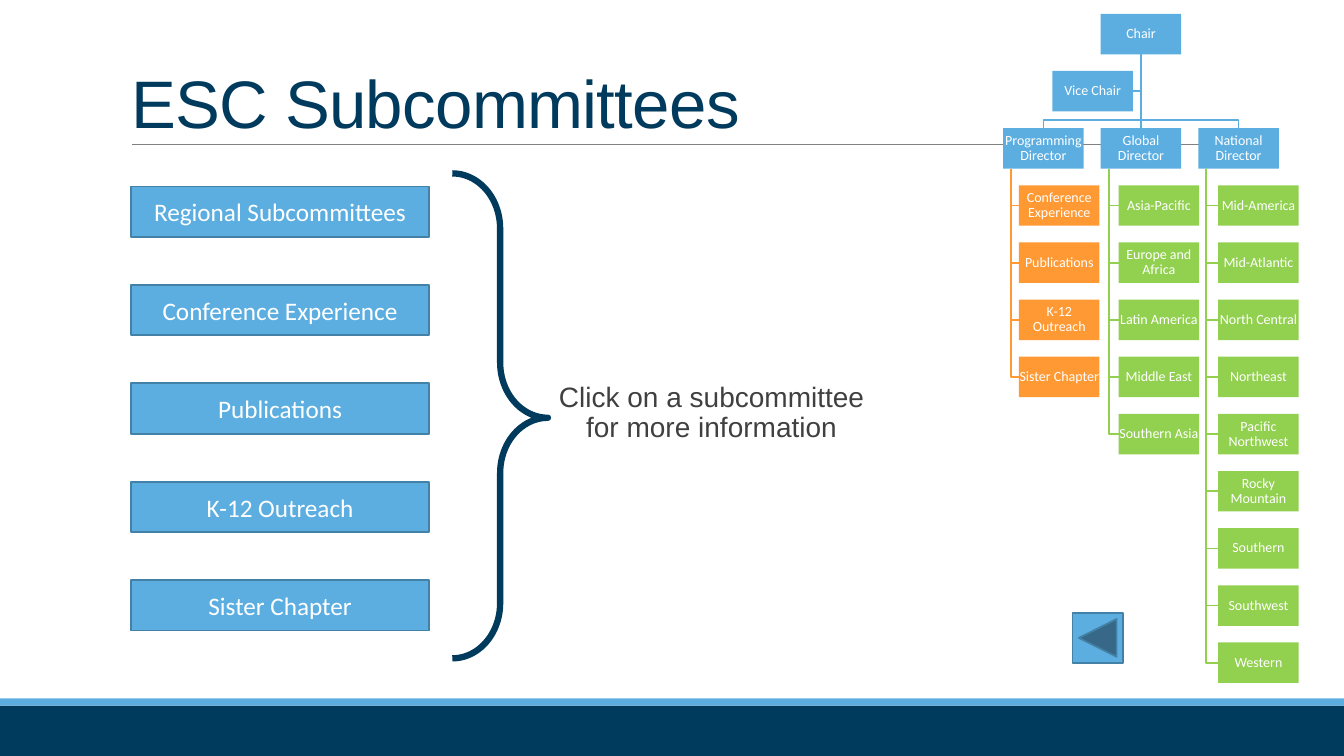
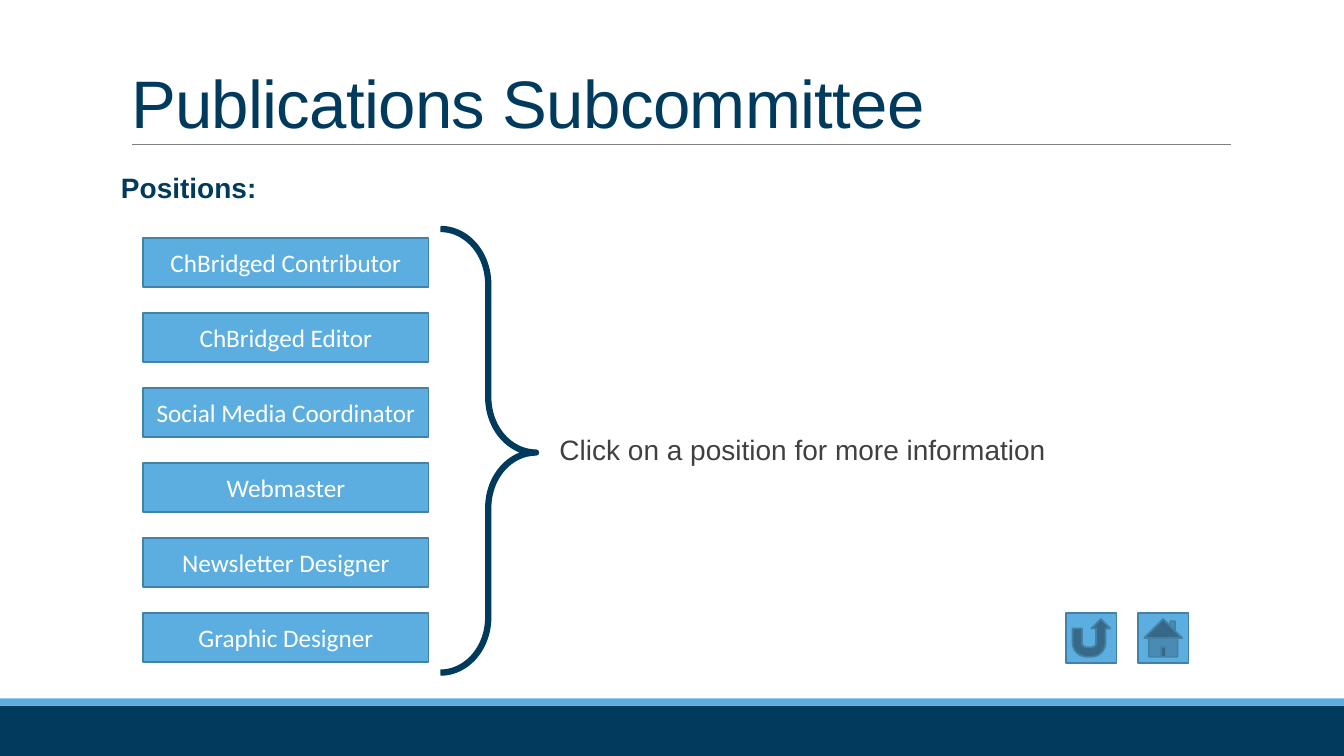
import lxml.etree
import pptx
import pptx.dml.color
import pptx.enum.shapes
import pptx.enum.text
import pptx.oxml.ns
import pptx.util

Cm, Pt = pptx.util.Cm, pptx.util.Pt
RGB = pptx.dml.color.RGBColor
SHAPE = pptx.enum.shapes.MSO_SHAPE
STRAIGHT = pptx.enum.shapes.MSO_CONNECTOR.STRAIGHT
ALIGN = pptx.enum.text.PP_ALIGN
ANCHOR = pptx.enum.text.MSO_ANCHOR
NO_AUTOFIT = pptx.enum.text.MSO_AUTO_SIZE.NONE

NAVY = RGB(0x00, 0x3A, 0x5D)
BLUE = RGB(0x5C, 0xAE, 0xE1)
EDGE = RGB(0x44, 0x81, 0xA6)
GREEN = RGB(0x92, 0xD0, 0x50)
ORANGE = RGB(0xFF, 0x99, 0x33)
DARK_GREY = RGB(0x40, 0x40, 0x40)
GREY = RGB(0x80, 0x80, 0x80)
WHITE = RGB(0xFF, 0xFF, 0xFF)

# Content; lengths in cm, boxes as left, top, width, height
SLIDES = [
    {
        "title": "ESC Subcommittees",
        "buttons": ["Regional Subcommittees", "Conference Experience", "Publications",
                    "K-12 Outreach", "Sister Chapter"],
        "first_button": (3.3, 4.7, 7.52, 1.27),
        "pitch": 2.48,
        "brace": (11.4, 4.37, 2.41, 12.22),
        "texts": [("Click on a subcommittee for more information",
                   (13.82, 9.53, 8.23, 2.13), ALIGN.CENTER, DARK_GREY, False)],
        "icons": [(SHAPE.ACTION_BUTTON_BACK_OR_PREVIOUS, 27.03)],
    },
    {
        "title": "Publications Subcommittee",
        "buttons": ["ChBridged Contributor", "ChBridged Editor", "Social Media Coordinator",
                    "Webmaster", "Newsletter Designer", "Graphic Designer"],
        "first_button": (3.61, 6, 7.19, 1.24),
        "pitch": 1.89,
        "brace": (11.1, 5.77, 2.41, 11.18),
        "texts": [("Positions:", (3.05, 4.27, 27.94, 1.2), ALIGN.LEFT, NAVY, True),
                  ("Click on a position for more information",
                   (14.1, 10.87, 15.21, 1.85), ALIGN.LEFT, DARK_GREY, False)],
        "icons": [(SHAPE.ACTION_BUTTON_RETURN, 26.87), (SHAPE.ACTION_BUTTON_HOME, 28.68)],
    },
]
ORG_TREE = [
    ("Programming Director", ORANGE,
     ["Conference Experience", "Publications", "K-12 Outreach", "Sister Chapter"]),
    ("Global Director", GREEN,
     ["Asia-Pacific", "Europe and Africa", "Latin America", "Middle East", "Southern Asia"]),
    ("National Director", GREEN,
     ["Mid-America", "Mid-Atlantic", "North Central", "Northeast", "Pacific Northwest",
      "Rocky Mountain", "Southern", "Southwest", "Western"]),
]

# Layout rules
WIDTH, HEIGHT = 33.87, 19.05
TITLE_BOX = (3.05, -0.33, 27.94, 4.04)
BANDS = [((0, 17.78, WIDTH, 1.27), NAVY), ((0, 17.6, WIDTH, 0.18), BLUE)]
RULE = (3.33, 3.63, 31.01, 3.63)
ICON_TOP, ICON_SIZE = 15.44, 1.27
ORG_W, ORG_H = 2.03, 1.02
ORG_TOP, ORG_PITCH = 0.35, 1.44
CHAIR_X, VICE_X = 27.74, 26.52
DIRECTOR_X, DIRECTOR_PITCH = 25.28, 2.46
MEMBER_X, MEMBER_PITCH = 25.68, 2.51
TRUNK_INSET, BUS_Y = 0.2, 3.02

BUTTON_FONT = {"name": "Calibri", "size": Pt(18)}
ORG_FONT = {"name": "Calibri", "size": Pt(10)}
BODY_FONT = {"name": "Arial", "size": Pt(20)}
TITLE_FONT = {"name": "Arial", "size": Pt(48)}


def cm(values):
    return [Cm(v) for v in values]


def write(tf, text, font, color, align=ALIGN.CENTER, anchor=ANCHOR.MIDDLE,
          spacing=1.0, margins=None, bold=False):
    frame_format = {"word_wrap": True, "auto_size": NO_AUTOFIT, "vertical_anchor": anchor}
    if margins:
        sides = ("margin_left", "margin_top", "margin_right", "margin_bottom")
        frame_format.update(zip(sides, cm(margins)))
    for name, value in frame_format.items():
        setattr(tf, name, value)
    p = tf.paragraphs[0]
    p.alignment, p.line_spacing = align, spacing
    r = p.add_run()
    r.text = text
    for name, value in {**font, "bold": bold}.items():
        setattr(r.font, name, value)
    r.font.color.rgb = color
    return r


def set_line(shape, color, width):
    shape.line.color.rgb = color
    shape.line.width = Pt(width)


def add_box(s, kind, box, fill=None, line=None, width=1.25):
    sp = s.shapes.add_shape(kind, *cm(box))
    sp.shadow.inherit = False
    if fill is None:
        sp.fill.background()
    else:
        sp.fill.solid()
        sp.fill.fore_color.rgb = fill
    if line is None:
        sp.line.fill.background()
    else:
        set_line(sp, line, width)
    return sp


def add_line(s, ends, color, width):
    line = s.shapes.add_connector(STRAIGHT, *cm(ends))
    set_line(line, color, width)
    lxml.etree.SubElement(line.element.spPr, pptx.oxml.ns.qn("a:effectLst"))
    return line


def add_elbow(s, points, color):
    start, *rest = [cm(point) for point in points]
    builder = s.shapes.build_freeform(*start)
    builder.add_line_segments(rest, close=False)
    sp = builder.convert_to_shape()
    sp.shadow.inherit = False
    sp.fill.background()
    set_line(sp, color, 1.25)


def furnish_layout(layout, s):
    """Place the bands and the title rule on the layout."""
    parts = [add_line(s, RULE, GREY, 0.5)]
    parts += [add_box(s, SHAPE.RECTANGLE, box, color) for box, color in BANDS]
    for part in parts:
        layout.shapes.element.append(part.element)


def add_content(s, content):
    # Title
    title = s.shapes.title
    title.left, title.top, title.width, title.height = cm(TITLE_BOX)
    r = write(title.text_frame, content["title"], TITLE_FONT, NAVY, ALIGN.LEFT,
              ANCHOR.BOTTOM, 0.85)
    r.font._element.set("spc", "-50")
    # Buttons and brace
    left, top, width, height = content["first_button"]
    for i, label in enumerate(content["buttons"]):
        box = (left, top + i * content["pitch"], width, height)
        sp = add_box(s, SHAPE.ACTION_BUTTON_CUSTOM, box, BLUE, EDGE)
        write(sp.text_frame, label, BUTTON_FONT, WHITE)
    brace = add_box(s, SHAPE.RIGHT_BRACE, content["brace"], line=NAVY, width=4.5)
    brace.adjustments[0], brace.adjustments[1] = 0.578, 0.504
    # Texts
    for text, box, align, color, bold in content["texts"]:
        tb = s.shapes.add_textbox(*cm(box))
        write(tb.text_frame, text, BODY_FONT, color, align, ANCHOR.TOP, 0.9,
              (0, 0.13, 0, 0.13), bold)
    # Navigation icons
    for kind, x in content["icons"]:
        add_box(s, kind, (x, ICON_TOP, ICON_SIZE, ICON_SIZE), BLUE, EDGE)


def org_top(level):
    return ORG_TOP + level * ORG_PITCH


def add_org_box(s, text, x, level, color):
    sp = add_box(s, SHAPE.RECTANGLE, (x, org_top(level), ORG_W, ORG_H), color)
    write(sp.text_frame, text, ORG_FONT, WHITE, spacing=0.9, margins=(0, 0, 0, 0))
    return sp


def add_org_chart(s):
    # Chair and vice chair
    center, chair_bottom = CHAIR_X + ORG_W / 2, ORG_TOP + ORG_H
    vice_y = org_top(1) + ORG_H / 2
    chair = add_org_box(s, "Chair", CHAIR_X, 0, BLUE)
    add_org_box(s, "Vice Chair", VICE_X, 1, BLUE)
    add_elbow(s, [(center, chair_bottom), (center, vice_y), (VICE_X + ORG_W, vice_y)], BLUE)
    # Directors, each with a column of members
    for col, (name, color, members) in enumerate(ORG_TREE):
        x = DIRECTOR_X + col * DIRECTOR_PITCH
        director = add_org_box(s, name, x, 2, BLUE)
        middle, top = x + ORG_W / 2, org_top(2)
        if col == 1:
            link = add_line(s, (center, chair_bottom, middle, top), BLUE, 1.25)
            link.begin_connect(chair, 2)
            link.end_connect(director, 0)
        else:
            add_elbow(s, [(center, chair_bottom), (center, BUS_Y), (middle, BUS_Y),
                          (middle, top)], BLUE)
        trunk, member_x = x + TRUNK_INSET, MEMBER_X + col * MEMBER_PITCH
        for level, member in enumerate(members, 3):
            add_org_box(s, member, member_x, level, color)
            y = org_top(level) + ORG_H / 2
            add_elbow(s, [(trunk, top + ORG_H), (trunk, y), (member_x, y)], color)


def main():
    prs = pptx.Presentation()
    prs.slide_width, prs.slide_height = Cm(WIDTH), Cm(HEIGHT)
    layout = prs.slide_layouts.get_by_name("Title Only")
    slides = [prs.slides.add_slide(layout) for _ in SLIDES]
    furnish_layout(layout, slides[0])
    for s, content in zip(slides, SLIDES):
        add_content(s, content)
    add_org_chart(slides[0])
    prs.save("out.pptx")


if __name__ == "__main__":
    main()
